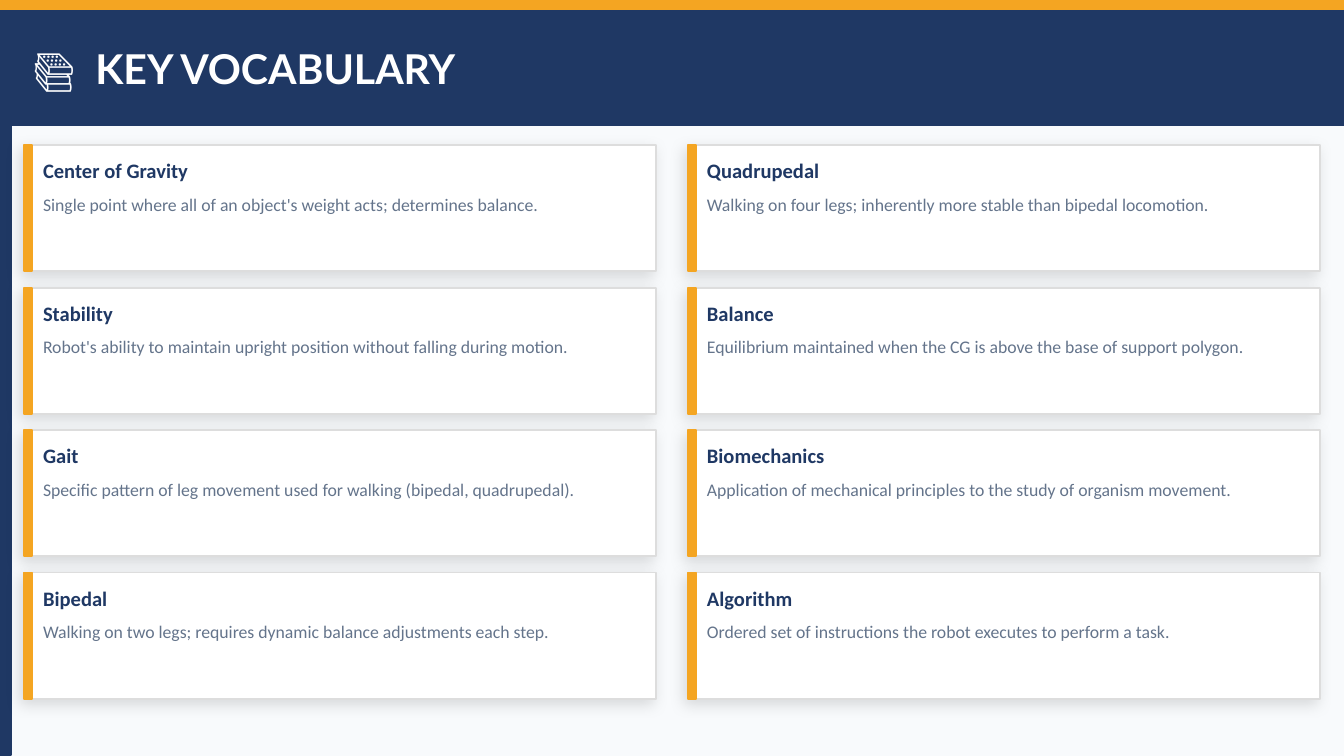
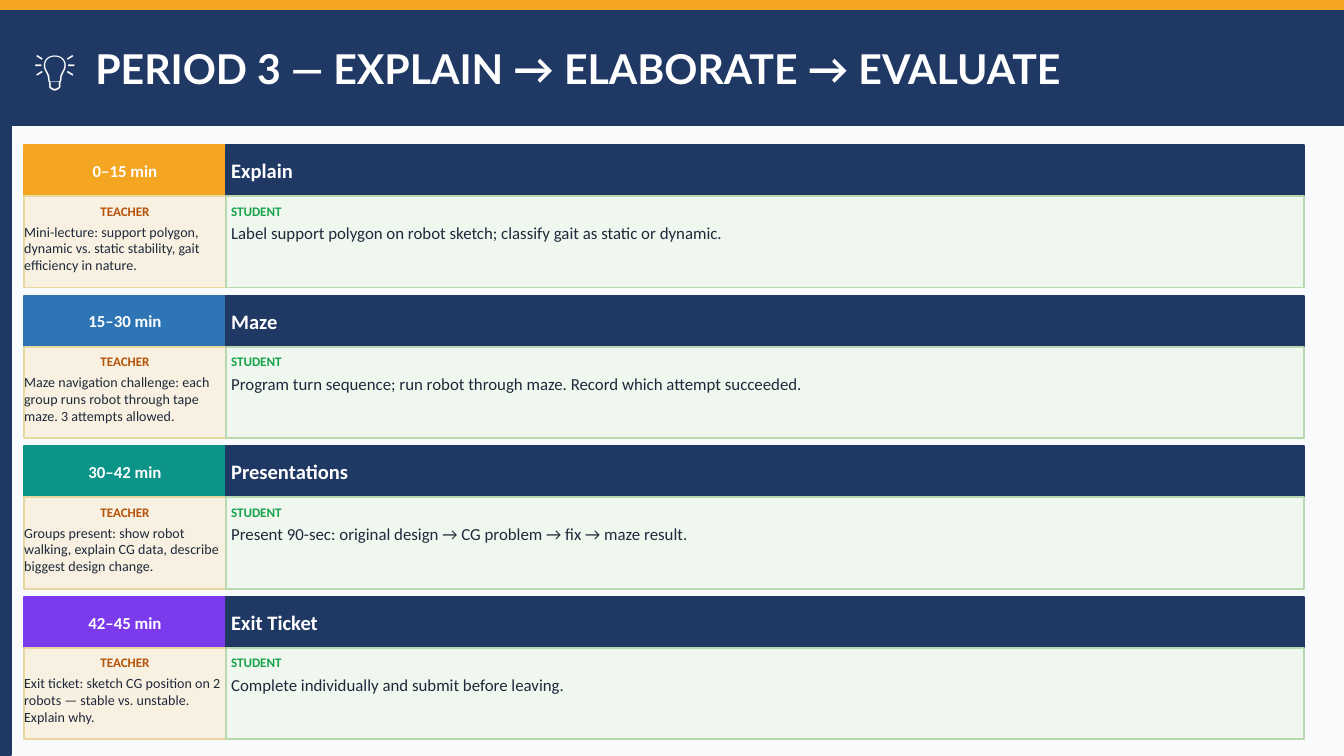
from lxml.etree import SubElement
from pptx import Presentation
from pptx.dml.color import RGBColor
from pptx.enum.shapes import MSO_SHAPE
from pptx.enum.text import MSO_ANCHOR, MSO_AUTO_SIZE, PP_ALIGN
from pptx.oxml.ns import qn
from pptx.util import Inches, Pt

COLORS = {
    "paper": "F8FAFC", "white": "FFFFFF", "navy": "1F3864", "orange": "F4A522",
    "blue": "2E75B6", "teal": "0D9488", "violet": "7C3AED",
    "gray": "64748B", "ink": "1E293B", "card_line": "DDDDDD", "shadow": "000000",
    "teacher": "B45309", "teacher_fill": "F8F0E0", "teacher_line": "E8D8A0",
    "student": "16A34A", "student_fill": "F0F7EE", "student_line": "B8D8B0",
}
TITLES = ["📚\tKEY VOCABULARY", "💡\tPERIOD 3 — EXPLAIN → ELABORATE → EVALUATE"]
TERMS = [
    ("Center of Gravity", "Single point where all of an object's weight acts; determines balance."),
    ("Stability", "Robot's ability to maintain upright position without falling during motion."),
    ("Gait", "Specific pattern of leg movement used for walking (bipedal, quadrupedal)."),
    ("Bipedal", "Walking on two legs; requires dynamic balance adjustments each step."),
    ("Quadrupedal", "Walking on four legs; inherently more stable than bipedal locomotion."),
    ("Balance", "Equilibrium maintained when the CG is above the base of support polygon."),
    ("Biomechanics", "Application of mechanical principles to the study of organism movement."),
    ("Algorithm", "Ordered set of instructions the robot executes to perform a task."),
]
STAGES = [
    ("0–15 min", "orange", "Explain",
     "Mini-lecture: support polygon, dynamic vs. static stability, gait efficiency in nature.",
     "Label support polygon on robot sketch; classify gait as static or dynamic."),
    ("15–30 min", "blue", "Maze",
     "Maze navigation challenge: each group runs robot through tape maze. 3 attempts allowed.",
     "Program turn sequence; run robot through maze. Record which attempt succeeded."),
    ("30–42 min", "teal", "Presentations",
     "Groups present: show robot walking, explain CG data, describe biggest design change.",
     "Present 90-sec: original design → CG problem → fix → maze result."),
    ("42–45 min", "violet", "Exit Ticket",
     "Exit ticket: sketch CG position on 2 robots — stable vs. unstable. Explain why.",
     "Complete individually and submit before leaving."),
]


def add_box(page, left, top, width, height, fill, line=None):
    box = page.shapes.add_shape(
        MSO_SHAPE.RECTANGLE, Inches(left), Inches(top), Inches(width), Inches(height))
    box.shadow.inherit = False
    box.fill.solid()
    box.fill.fore_color.rgb = RGBColor.from_string(COLORS[fill])
    box.line.color.rgb = RGBColor.from_string(COLORS[line or fill])
    box.line.width = Pt(1)
    return box


def write_text(box, text, size, color, bold=False, font="Calibri",
               anchor=MSO_ANCHOR.MIDDLE, align=PP_ALIGN.LEFT):
    frame = box.text_frame
    frame.word_wrap = True
    frame.auto_size = MSO_AUTO_SIZE.NONE
    frame.vertical_anchor = anchor
    frame.margin_left = frame.margin_right = frame.margin_top = frame.margin_bottom = 0
    frame.text = text
    para = frame.paragraphs[0]
    para.alignment = align
    for span in para.runs:
        span.font.name = font
        span.font.size = Pt(size)
        span.font.bold = bold
        span.font.color.rgb = RGBColor.from_string(COLORS[color])


deck = Presentation()
deck.slide_width = Inches(10)
deck.slide_height = Inches(10 * 9 / 16)

pages = []
for heading in TITLES:
    page = deck.slides.add_slide(deck.slide_layouts[5])
    page.background.fill.solid()
    page.background.fill.fore_color.rgb = RGBColor.from_string(COLORS["paper"])
    add_box(page, 0, 0, 10, 0.08, "orange")
    add_box(page, 0, 0.08, 0.08, 5.54, "navy")
    band = add_box(page, 0.08, 0.08, 9.92, 0.85, "navy")
    title = page.shapes.title
    band.element.addnext(title.element)
    title.left, title.top = Inches(0.25), Inches(0.08)
    title.width, title.height = Inches(9.5), Inches(0.85)
    write_text(title, heading, 22, "white", True, "Lato")
    stops = SubElement(title.text_frame.paragraphs[0]._p.get_or_add_pPr(), qn("a:tabLst"))
    SubElement(stops, qn("a:tab"), pos=str(Inches(0.46)), algn="l")
    pages.append(page)
vocabulary, schedule = pages

for index, (term, meaning) in enumerate(TERMS):
    column, row = divmod(index, 4)
    left = 0.18 + column * 4.94
    top = 1.08 + row * 1.06
    card = add_box(vocabulary, left, top, 4.7, 0.94, "white", "card_line")
    effects = card.element.spPr.find(qn("a:effectLst"))
    shadow = SubElement(effects, qn("a:outerShdw"), blurRad=str(Pt(8)), dist=str(Pt(3)),
                        dir="8100000", algn="bl", rotWithShape="0")
    shade = SubElement(shadow, qn("a:srgbClr"), val=COLORS["shadow"])
    SubElement(shade, qn("a:alpha"), val="12000")
    add_box(vocabulary, left, top, 0.06, 0.94, "orange")
    label = vocabulary.shapes.add_textbox(
        Inches(left + 0.14), Inches(top + 0.04), Inches(4.48), Inches(0.3))
    write_text(label, term, 11, "navy", True)
    body = vocabulary.shapes.add_textbox(
        Inches(left + 0.14), Inches(top + 0.36), Inches(4.48), Inches(0.52))
    write_text(body, meaning, 9.5, "gray", anchor=MSO_ANCHOR.TOP)

for row, (minutes, accent, stage, teacher, student) in enumerate(STAGES):
    top = 1.08 + row * 1.12
    columns = [
        (0.18, 1.5, 0.18, 1.5, accent, minutes, 9, "teacher", teacher, 7.5, PP_ALIGN.CENTER),
        (1.68, 8.02, 1.72, 7.9, "navy", stage, 11, "student", student, 9, PP_ALIGN.LEFT),
    ]
    for left, width, inner, span_width, fill, head, head_size, role, task, size, align in columns:
        add_box(schedule, left, top, width, 0.38, fill)
        add_box(schedule, left, top + 0.38, width, 0.68, role + "_fill", role + "_line")
        texts = [
            (0, 0.38, head, head_size, "white", True, MSO_ANCHOR.MIDDLE, align),
            (0.38, 0.22, role.upper(), 7, role, True, MSO_ANCHOR.MIDDLE, align),
            (0.58, 0.48, task, size, "ink", False, MSO_ANCHOR.TOP, PP_ALIGN.LEFT),
        ]
        for offset, height, text, points, color, bold, anchor, side in texts:
            box = schedule.shapes.add_textbox(
                Inches(inner), Inches(top + offset), Inches(span_width), Inches(height))
            write_text(box, text, points, color, bold, anchor=anchor, align=side)

deck.save("out.pptx")
